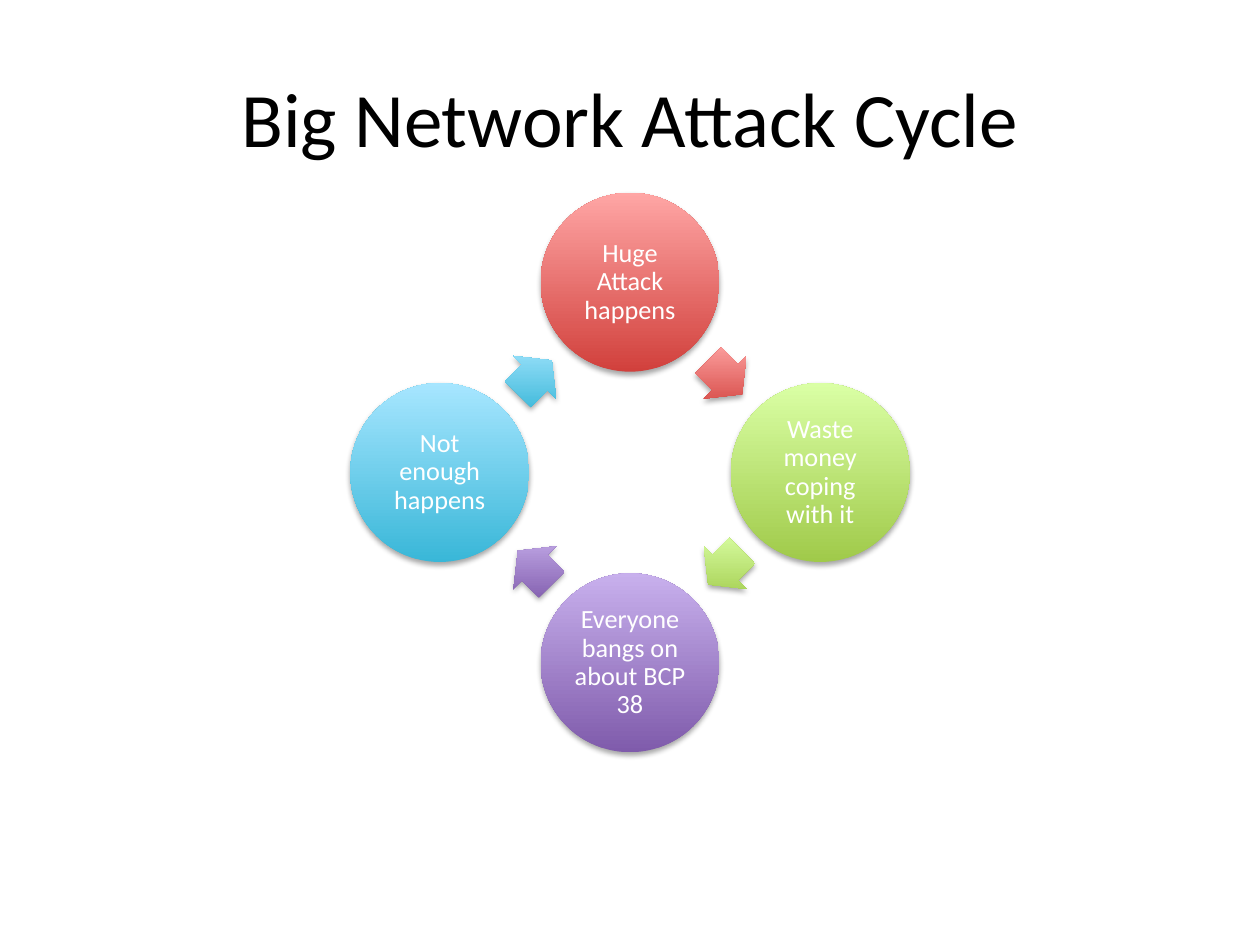
from math import cos, radians, sin

from lxml.etree import SubElement
from pptx import Presentation
from pptx.dml.color import RGBColor
from pptx.enum.shapes import MSO_SHAPE
from pptx.enum.text import MSO_ANCHOR, PP_ALIGN
from pptx.oxml.ns import qn
from pptx.util import Inches, Pt

COLORS = {
    "title": "000000", "label": "FFFFFF", "shadow": "000000",
    "red": ("D1403C", "FFA6A5"),
    "green": ("A0CA4A", "DAFFA5"),
    "purple": ("7F5BAB", "C8B0ED"),
    "blue": ("39B7D8", "A7E6FF"),
}
# Clockwise from the top
STAGES = [
    ("Huge Attack happens", "red"),
    ("Waste money coping with it", "green"),
    ("Everyone bangs on about BCP 38", "purple"),
    ("Not enough happens", "blue"),
]
CENTER_X, CENTER_Y, RADIUS = 5, 3.75, 1.51
CIRCLE = 1.42
ARROW_W, ARROW_H = 0.38, 0.48


def write_text(shape, text, size, color, inset):
    tf = shape.text_frame
    frame_format = {
        "word_wrap": True, "vertical_anchor": MSO_ANCHOR.MIDDLE,
        "margin_left": inset, "margin_right": inset,
        "margin_top": inset, "margin_bottom": inset,
    }
    for name, value in frame_format.items():
        setattr(tf, name, value)
    p = tf.paragraphs[0]
    p.alignment = PP_ALIGN.CENTER
    r = p.add_run()
    r.text = text
    r.font.name = "Calibri"
    r.font.size = Pt(size)
    r.font.color.rgb = RGBColor.from_string(color)
    return p


def add_shadow(shape):
    shape.shadow.inherit = False
    effects = shape._element.spPr.find(qn("a:effectLst"))
    shadow = SubElement(effects, qn("a:outerShdw"), blurRad=str(Pt(3.1)),
                        dist=str(Pt(1.8)), dir="5400000", rotWithShape="0")
    color = SubElement(shadow, qn("a:srgbClr"), val=COLORS["shadow"])
    SubElement(color, qn("a:alpha"), val="35000")


def add_gradient_shape(s, kind, x, y, width, height, color):
    """Add a shape centred on x, y that is dark at the bottom and light at the top."""
    shape = s.shapes.add_shape(kind, Inches(x - width / 2), Inches(y - height / 2),
                               Inches(width), Inches(height))
    shape.fill.gradient()
    shape.fill.gradient_angle = 90
    for stop, value in zip(shape.fill.gradient_stops, COLORS[color]):
        stop.color.rgb = RGBColor.from_string(value)
    # Keep the gradient upright when the shape turns
    shape._element.spPr.find(qn("a:gradFill")).set("rotWithShape", "0")
    shape.line.fill.background()
    add_shadow(shape)
    return shape


def add_stage(s, angle, text, color):
    x = CENTER_X + RADIUS * cos(radians(angle))
    y = CENTER_Y + RADIUS * sin(radians(angle))
    circle = add_gradient_shape(s, MSO_SHAPE.OVAL, x, y, CIRCLE, CIRCLE, color)
    p = write_text(circle, text, 15, COLORS["label"], Inches(0.02))
    p.line_spacing = 0.9


def add_arrow(s, angle, color):
    """Add the arrow that lies midway between two neighbouring stages."""
    distance = RADIUS * cos(radians(45))
    x = CENTER_X + distance * cos(radians(angle))
    y = CENTER_Y + distance * sin(radians(angle))
    arrow = add_gradient_shape(s, MSO_SHAPE.RIGHT_ARROW, x, y, ARROW_W, ARROW_H, color)
    arrow.adjustments[0] = 0.6
    arrow.adjustments[1] = 0.5
    arrow.rotation = (angle + 90) % 360


def add_title(s, text):
    title = s.shapes.title
    title.left, title.top = Inches(0.5), Inches(0.3)
    title.width, title.height = Inches(9), Inches(1.25)
    write_text(title, text, 44, COLORS["title"], Inches(0.1))


def main():
    prs = Presentation()
    prs.slide_width, prs.slide_height = Inches(10), Inches(7.5)
    s = prs.slides.add_slide(prs.slide_layouts[5])
    add_title(s, "Big Network Attack Cycle")
    step = 360 / len(STAGES)
    for i, (text, color) in enumerate(STAGES):
        angle = -90 + i * step
        add_stage(s, angle, text, color)
        add_arrow(s, angle + step / 2, color)
    prs.save("out.pptx")


if __name__ == "__main__":
    main()
